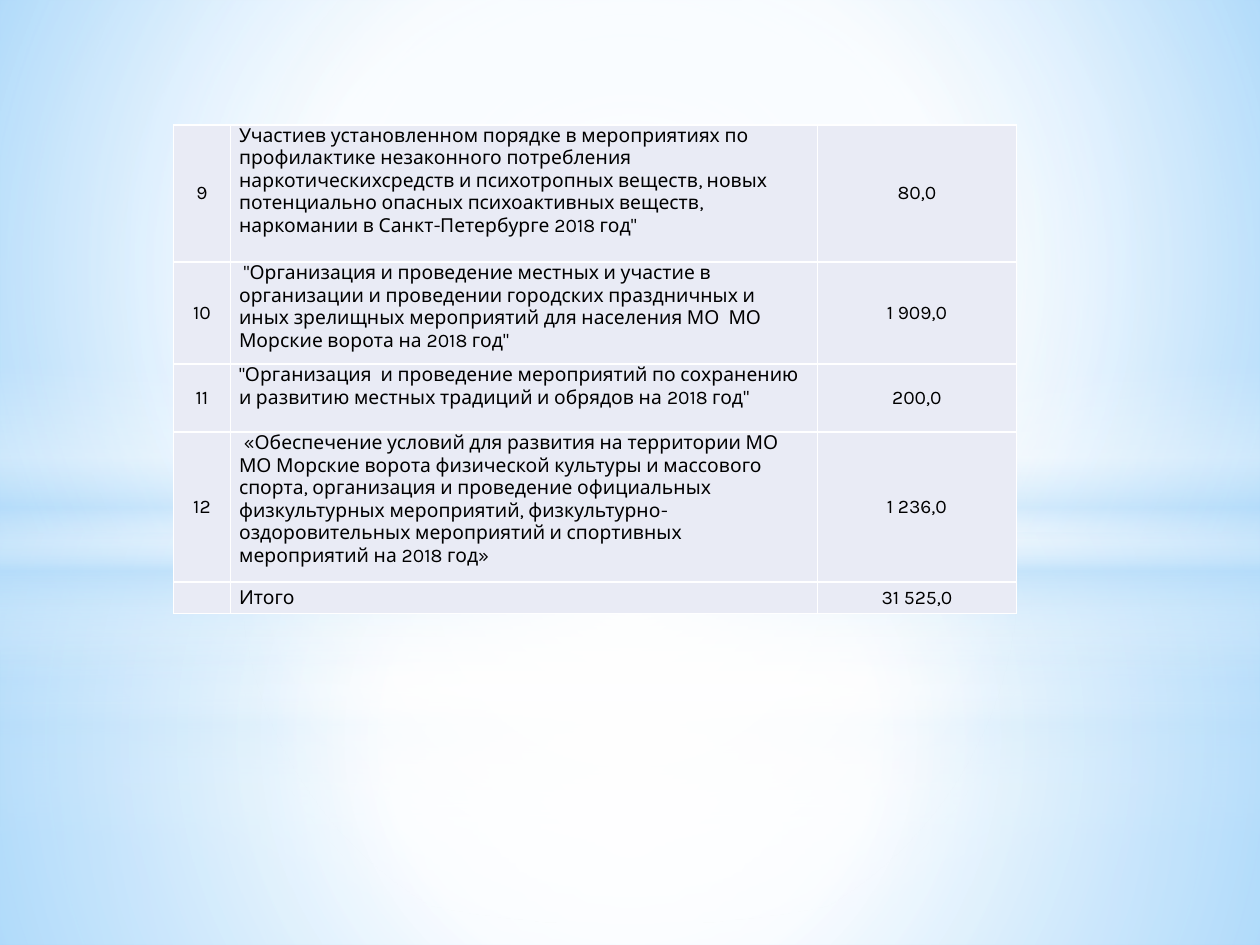
from lxml import etree
from pptx import Presentation
from pptx.dml.color import RGBColor
from pptx.enum.shapes import MSO_SHAPE
from pptx.enum.text import MSO_ANCHOR, PP_ALIGN
from pptx.oxml import parse_xml
from pptx.oxml.ns import nsdecls, qn
from pptx.util import Pt

RECTANGLE, OVAL = MSO_SHAPE.RECTANGLE, MSO_SHAPE.OVAL
MIDDLE, TOP = MSO_ANCHOR.MIDDLE, MSO_ANCHOR.TOP
CENTER, LEFT = PP_ALIGN.CENTER, PP_ALIGN.LEFT
WHITE, SKY = "FFFFFF", "B4DCFA"
PAGE_WIDTH, PAGE_HEIGHT = 720, 540


def set_gradient(properties, stops, focus=None):
    """Replace a:noFill by a gradient: circular around focus, else top to bottom.

    Stops are (position, colour, opacity), in percent; focus is left, top, right, bottom.
    """
    gradient = parse_xml(f'<a:gradFill {nsdecls("a")} rotWithShape="1"><a:gsLst/></a:gradFill>')
    for position, colour, opacity in stops:
        stop = etree.SubElement(gradient[0], qn("a:gs"), pos=str(position * 1000))
        tint = etree.SubElement(stop, qn("a:srgbClr"), val=colour)
        if opacity < 100:
            etree.SubElement(tint, qn("a:alpha"), val=str(opacity * 1000))
    if focus:
        circle = etree.SubElement(gradient, qn("a:path"), path="circle")
        sides = {side: str(value * 1000) for side, value in zip("ltrb", focus)}
        etree.SubElement(circle, qn("a:fillToRect"), **sides)
    else:
        etree.SubElement(gradient, qn("a:lin"), ang="5400000", scaled="0")
    properties.replace(properties.find(qn("a:noFill")), gradient)


deck = Presentation()
deck.slide_width, deck.slide_height = Pt(PAGE_WIDTH), Pt(PAGE_HEIGHT)
page = deck.slides.add_slide(deck.slide_layouts[6])

# Background
page.background.fill.background()
set_gradient(page.element.cSld.find(qn("p:bg")).find(qn("p:bgPr")),
             [(0, "9ED5FF", 100), (60, WHITE, 100), (100, "5BB9FF", 100)],
             (20, 10, 20, 60))

# Two layers of light, each with ground, sky, a beam on the horizon and a glow
BEAM = [(0, WHITE, 0), (29, WHITE, 30), (45, SKY, 40),
        (55, WHITE, 26), (65, SKY, 60), (100, WHITE, 0)]
MIDPOINT = (50, 50, 50, 50)
# horizon, beam top, ground opacities, sky opacities, end of glow
layers = [
    (401.76, 296.64, (91, 76, 79), (89, 62, 79), 56),
    (304.56, 208.8, (92, 77, 80), (90, 63, 80), 54),
]
for horizon, beam_top, ground, sky, glow_end in layers:
    parts = [
        (RECTANGLE, horizon, PAGE_HEIGHT - horizon,
         list(zip((0, 37, 100), (WHITE, WHITE, SKY), ground)), MIDPOINT),
        (RECTANGLE, 0, horizon,
         list(zip((0, 48, 100), (WHITE, WHITE, SKY), sky)), MIDPOINT),
        (RECTANGLE, beam_top, 180, BEAM, None),
        (OVAL, 126, 401.76, [(0, WHITE, 100), (glow_end, WHITE, 0)], MIDPOINT),
    ]
    for kind, top, height, stops, focus in parts:
        light = page.shapes.add_shape(kind, 0, Pt(top), Pt(PAGE_WIDTH), Pt(height))
        light.shadow.inherit = False
        light.line.fill.background()
        light.fill.background()
        set_gradient(light.element.spPr, stops, focus)

# Budget table
rows = [
    ("9", "Участиев установленном порядке в мероприятиях по профилактике незаконного "
          "потребления наркотическихсредств и психотропных веществ, новых потенциально "
          "опасных психоактивных веществ, наркомании в Санкт-Петербурге 2018 год\"", "80,0"),
    ("10", " \"Организация и проведение местных и участие в организации и проведении "
           "городских праздничных и иных зрелищных мероприятий для населения МО  МО "
           "Морские ворота на 2018 год\"", "1 909,0"),
    ("11", "\"Организация  и проведение мероприятий по сохранению и развитию местных "
           "традиций и обрядов на 2018 год\"", "200,0"),
    ("12", " «Обеспечение условий для развития на территории МО МО Морские ворота "
           "физической культуры и массового спорта, организация и проведение официальных "
           "физкультурных мероприятий, физкультурно-оздоровительных мероприятий и "
           "спортивных мероприятий на 2018 год»", "1 236,0"),
    ("", "Итого", "31 525,0"),
]
column_widths = [32.4, 335.5, 113.8]
row_heights = [78.5, 58.3, 38.9, 85.7, 18]
frame = page.shapes.add_table(len(rows), len(column_widths), Pt(99.2), Pt(71.3),
                              Pt(sum(column_widths)), Pt(sum(row_heights)))
table = frame.table
table.first_row = table.horz_banding = False
for column, width in zip(table.columns, column_widths):
    column.width = Pt(width)
for row, height in zip(table.rows, row_heights):
    row.height = Pt(height)

for row_index, values in enumerate(rows):
    is_total = row_index == len(rows) - 1
    for column_index, value in enumerate(values):
        is_description = column_index == 1
        cell = table.cell(row_index, column_index)
        cell.text = value
        cell.margin_left = cell.margin_right = Pt(5)
        cell.margin_top = cell.margin_bottom = 0
        cell.vertical_anchor = TOP if is_description and not is_total else MIDDLE
        para = cell.text_frame.paragraphs[0]
        para.alignment = LEFT if is_description else CENTER
        para.font.name, para.font.size = "Karla", Pt(11)
        para.font.color.rgb = RGBColor.from_string("000000")
        for side in ("a:lnL", "a:lnR", "a:lnT", "a:lnB"):
            border = etree.SubElement(cell._tc.get_or_add_tcPr(), qn(side), w=str(Pt(1)))
            paint = etree.SubElement(border, qn("a:solidFill"))
            etree.SubElement(paint, qn("a:srgbClr"), val=WHITE)
        cell.fill.solid()
        cell.fill.fore_color.rgb = RGBColor.from_string("E9EBF5")

deck.save("out.pptx")
